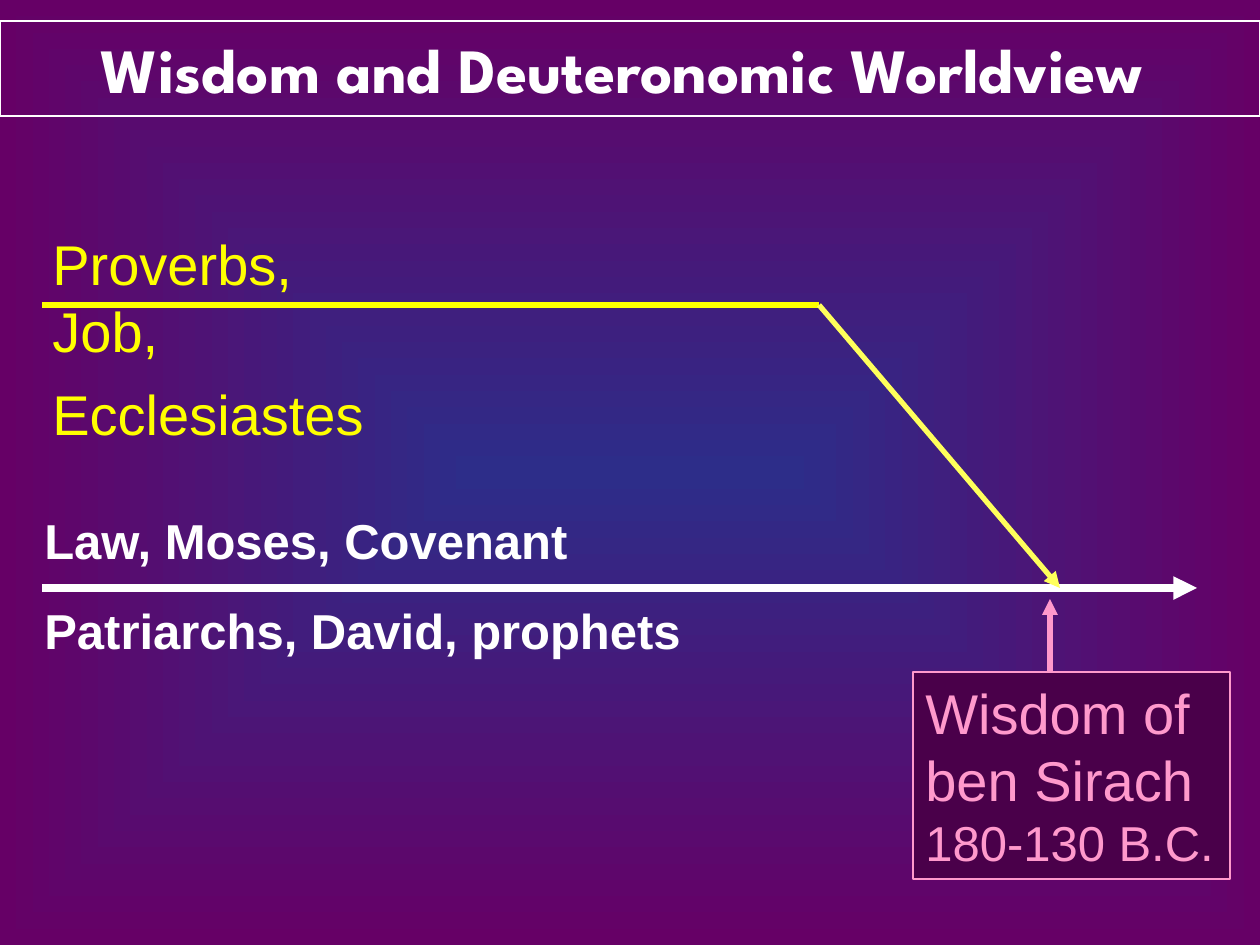
from lxml import etree
from pptx import Presentation
from pptx.dml.color import RGBColor
from pptx.enum.shapes import MSO_CONNECTOR, MSO_SHAPE
from pptx.enum.text import MSO_ANCHOR, PP_ALIGN
from pptx.oxml.ns import qn
from pptx.util import Emu, Pt

RECTANGLE = MSO_SHAPE.RECTANGLE
STRAIGHT = MSO_CONNECTOR.STRAIGHT
TOP, MIDDLE = MSO_ANCHOR.TOP, MSO_ANCHOR.MIDDLE
LEFT, CENTER = PP_ALIGN.LEFT, PP_ALIGN.CENTER

WHITE = RGBColor(0xFF, 0xFF, 0xFF)
YELLOW = RGBColor(0xFF, 0xFF, 0x00)
PALE_YELLOW = RGBColor(0xFF, 0xFF, 0x5B)
PINK = RGBColor(0xFF, 0x99, 0xCC)
DARK_PURPLE = RGBColor(0x4A, 0x00, 0x4A)
PURPLE = RGBColor(0x66, 0x00, 0x66)
BLUE = RGBColor(0x2D, 0x2D, 0x89)

EMU_PER_PX = 914400 / 126
SLIDE_SIZE = (1260, 945)

TITLE = "Wisdom and Deuteronomic Worldview "
TITLE_BOX = (0, 21, 1260, 95)

# text, size in points
LAW_LINES = [("Law, Moses, Covenant", 28), ("Patriarchs, David, prophets", 28)]
PROVERBS_LINES = [("Proverbs, Job,", 32), ("Ecclesiastes", 32)]
SIRACH_LINES = [("Wisdom of", 32), ("ben Sirach", 32), ("180-130 B.C.", 28)]

LAW_BOX = (32, 504, 663, 164)
PROVERBS_BOX = (40, 223, 385, 164)
SIRACH_BOX = (913, 672, 317, 207)

WISDOM_Y, LAW_Y = 305, 588
START_X, BEND_X = 42, 819
# start, end, colour, width in points, has arrowhead
TIMELINES = [
    ((START_X, WISDOM_Y), (BEND_X, WISDOM_Y), YELLOW, 3, False),
    ((START_X, LAW_Y), (1197, LAW_Y), WHITE, 4.5, True),
    ((BEND_X, WISDOM_Y), (1060, LAW_Y), PALE_YELLOW, 3, True),
]
SIRACH_ARROW = ((1050, SIRACH_BOX[1]), (1050, 599), PINK, 3, True)


def px(*lengths):
    return [Emu(round(length * EMU_PER_PX)) for length in lengths]


def paint_background(slide):
    """Fill the slide with a gradient that spreads from its centre."""
    fill = slide.background.fill
    fill.gradient()
    for stop, color in zip(fill.gradient_stops, (BLUE, PURPLE)):
        stop.color.rgb = color
    gradient = slide.background._cSld.find(".//" + qn("a:gradFill"))
    gradient.remove(gradient.find(qn("a:lin")))
    path = etree.SubElement(gradient, qn("a:path"), path="shape")
    sides = dict.fromkeys("ltrb", "50000")
    etree.SubElement(path, qn("a:fillToRect"), sides)


def write_lines(shape, lines, color, font="Arial", bold=False, gap=0,
                wrap=False, align=LEFT, anchor=TOP):
    """Write one paragraph per line, with a gap in points between them."""
    frame = shape.text_frame
    frame.word_wrap = wrap
    frame.vertical_anchor = anchor
    frame.text = "\n".join(text for text, _ in lines)
    for index, (paragraph, (_, size)) in enumerate(zip(frame.paragraphs, lines)):
        paragraph.alignment = align
        paragraph.space_before = Pt(gap if index else 0)
        run_font = paragraph.runs[0].font
        run_font.name, run_font.size, run_font.bold = font, Pt(size), bold
        run_font.color.rgb = color


def add_box(slide, box, line_color, line_width, fill_color=None):
    shape = slide.shapes.add_shape(RECTANGLE, *px(*box))
    shape.shadow.inherit = False
    if fill_color is None:
        shape.fill.background()
    else:
        shape.fill.solid()
        shape.fill.fore_color.rgb = fill_color
    shape.line.color.rgb = line_color
    shape.line.width = Pt(line_width)
    return shape


def add_line(slide, start, end, color, width, has_arrowhead):
    connector = slide.shapes.add_connector(STRAIGHT, *px(*start, *end))
    connector.line.color.rgb = color
    connector.line.width = Pt(width)
    properties = connector._element.spPr
    if has_arrowhead:
        etree.SubElement(properties.find(qn("a:ln")), qn("a:tailEnd"), type="triangle")
    etree.SubElement(properties, qn("a:effectLst"))


def main():
    presentation = Presentation()
    presentation.slide_width, presentation.slide_height = px(*SLIDE_SIZE)
    slide = presentation.slides.add_slide(presentation.slide_layouts[6])
    paint_background(slide)

    title = add_box(slide, TITLE_BOX, WHITE, 1.5)
    write_lines(title, [(TITLE, 36)], WHITE, font="League Spartan", bold=True,
                wrap=True, align=CENTER, anchor=MIDDLE)

    for timeline in TIMELINES:
        add_line(slide, *timeline)

    law = slide.shapes.add_textbox(*px(*LAW_BOX))
    write_lines(law, LAW_LINES, WHITE, bold=True, gap=18)
    proverbs = slide.shapes.add_textbox(*px(*PROVERBS_BOX))
    write_lines(proverbs, PROVERBS_LINES, YELLOW, gap=9, wrap=True)

    sirach = add_box(slide, SIRACH_BOX, PINK, 0.75, DARK_PURPLE)
    write_lines(sirach, SIRACH_LINES, PINK)
    add_line(slide, *SIRACH_ARROW)

    presentation.save("out.pptx")


if __name__ == "__main__":
    main()
